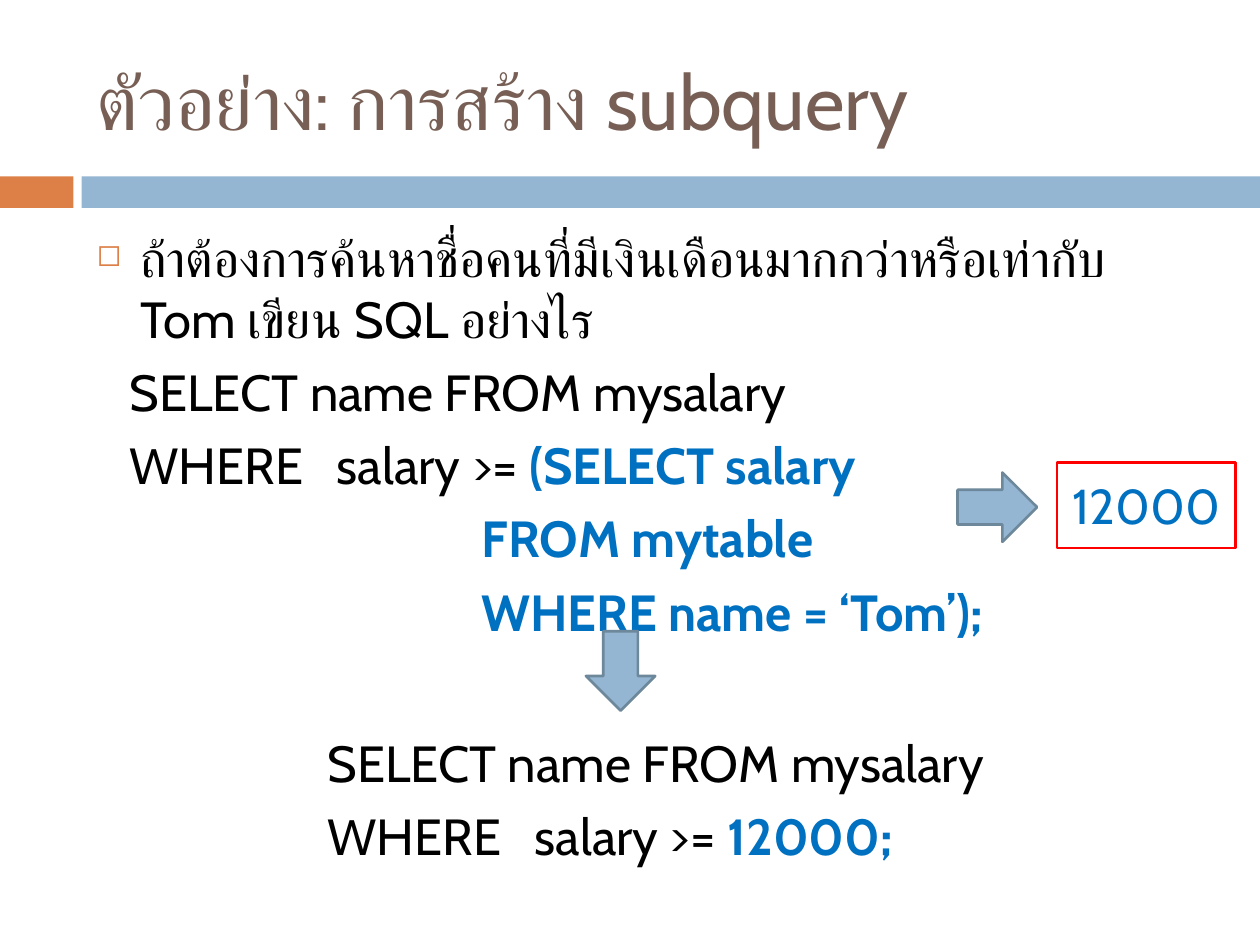
from lxml import etree
from pptx import Presentation, util as u
from pptx.dml.color import RGBColor
from pptx.enum import shapes, text
from pptx.oxml.ns import qn

BLUE, ORANGE, BROWN = "94B6D2", "DD8047", "775F55"
BLACK, ACCENT, RED, SLATE = "000000", "0070C0", "FF0000", "6D879B"


def color(value):
    return RGBColor.from_string(value)


class SlideBuilder:
    font = "Cabin"
    body_size = 29
    gap = 7
    tab = 118.5

    def __init__(self, slide):
        self.slide = slide

    def shape(self, kind, area, fill=None, line=None, rotation=0):
        shape = self.slide.shapes.add_shape(kind, *map(u.Pt, area))
        shape.shadow.inherit = False
        shape.rotation = rotation
        if fill:
            shape.fill.solid()
            shape.fill.fore_color.rgb = color(fill)
        else:
            shape.fill.background()
        if line:
            shape.line.color.rgb = color(line)
            shape.line.width = u.Pt(1.5)
        else:
            shape.line.fill.background()
        return shape

    def arrow(self, area, rotation=0):
        return self.shape(shapes.MSO_SHAPE.RIGHT_ARROW, area, BLUE, SLATE, rotation)

    def bar(self, area, fill):
        return self.shape(shapes.MSO_SHAPE.RECTANGLE, area, fill)

    def span(self, para, words, size, ink, bold=False):
        span = para.add_run()
        span.text = words
        span.font.name = self.font
        span.font.size = u.Pt(size)
        span.font.bold = bold
        span.font.color.rgb = color(ink)

    def text_box(self, area, anchor=text.MSO_ANCHOR.TOP):
        box = self.slide.shapes.add_textbox(*map(u.Pt, area))
        box.text_frame.word_wrap = True
        box.text_frame.vertical_anchor = anchor
        return box.text_frame

    def title(self, area, words):
        frame = self.text_box(area, text.MSO_ANCHOR.MIDDLE)
        self.span(frame.paragraphs[0], words, 44, BROWN)

    def bullet(self, area, words):
        para = self.text_box(area).paragraphs[0]
        para.space_before = u.Pt(self.gap)
        self.span(para, words, self.body_size, BLACK)
        props = para._p.get_or_add_pPr()
        props.set("marL", str(u.Pt(25)))
        props.set("indent", str(-u.Pt(25)))
        ink = etree.SubElement(props, qn("a:buClr"))
        etree.SubElement(ink, qn("a:srgbClr"), val=ORANGE)
        etree.SubElement(props, qn("a:buSzPct"), val="60000")
        etree.SubElement(props, qn("a:buChar"), char="◻")

    def query(self, area, lines):
        frame = self.text_box(area)
        for index, (indent, spans) in enumerate(lines):
            para = frame.add_paragraph() if index else frame.paragraphs[0]
            para.space_before = u.Pt(self.gap)
            props = para._p.get_or_add_pPr()
            props.set("marL", str(u.Pt(indent)))
            tabs = etree.SubElement(props, qn("a:tabLst"))
            etree.SubElement(tabs, qn("a:tab"), pos=str(u.Pt(self.tab)), algn="l")
            for words, strong in spans:
                self.span(para, words, self.body_size, ACCENT if strong else BLACK, strong)

    def result(self, area, words):
        box = self.shape(shapes.MSO_SHAPE.RECTANGLE, area, line=RED)
        box.text_frame.vertical_anchor = text.MSO_ANCHOR.MIDDLE
        para = box.text_frame.paragraphs[0]
        para.alignment = text.PP_ALIGN.CENTER
        self.span(para, words, 28, ACCENT)


def main():
    deck = Presentation()
    deck.slide_width, deck.slide_height = u.Pt(720), u.Pt(540)
    page = SlideBuilder(deck.slides.add_slide(deck.slide_layouts[6]))

    page.bar((0, 100.8, 42, 18), ORANGE)
    page.bar((46.6, 100.8, 673.4, 18), BLUE)
    page.title((48.2, 18, 642, 78), "ตัวอย่าง: การสร้าง subquery")
    page.bullet((48.2, 126, 642, 78),
                "ถ้าต้องการค้นหาชื่อคนที่มีเงินเดือนมากกว่าหรือเท่ากับ Tom เขียน SQL อย่างไร")

    select = (0, [("SELECT name FROM mysalary", False)])
    where = ("WHERE\tsalary >= ", False)
    page.query((67, 202.7, 623, 175), [
        select,
        (0, [where, ("(SELECT salary", True)]),
        (201, [("FROM mytable", True)]),
        (201, [("WHERE name = ‘Tom’);", True)]),
    ])
    page.arrow((547.2, 270, 45.4, 39.6))
    page.result((604, 264.2, 102.2, 49), "12000")
    page.arrow((331.9, 363.6, 45.4, 39.6), rotation=90)
    page.query((180, 414.7, 522, 90), [select, (0, [where, ("12000;", True)])])

    deck.save("out.pptx")


if __name__ == "__main__":
    main()
